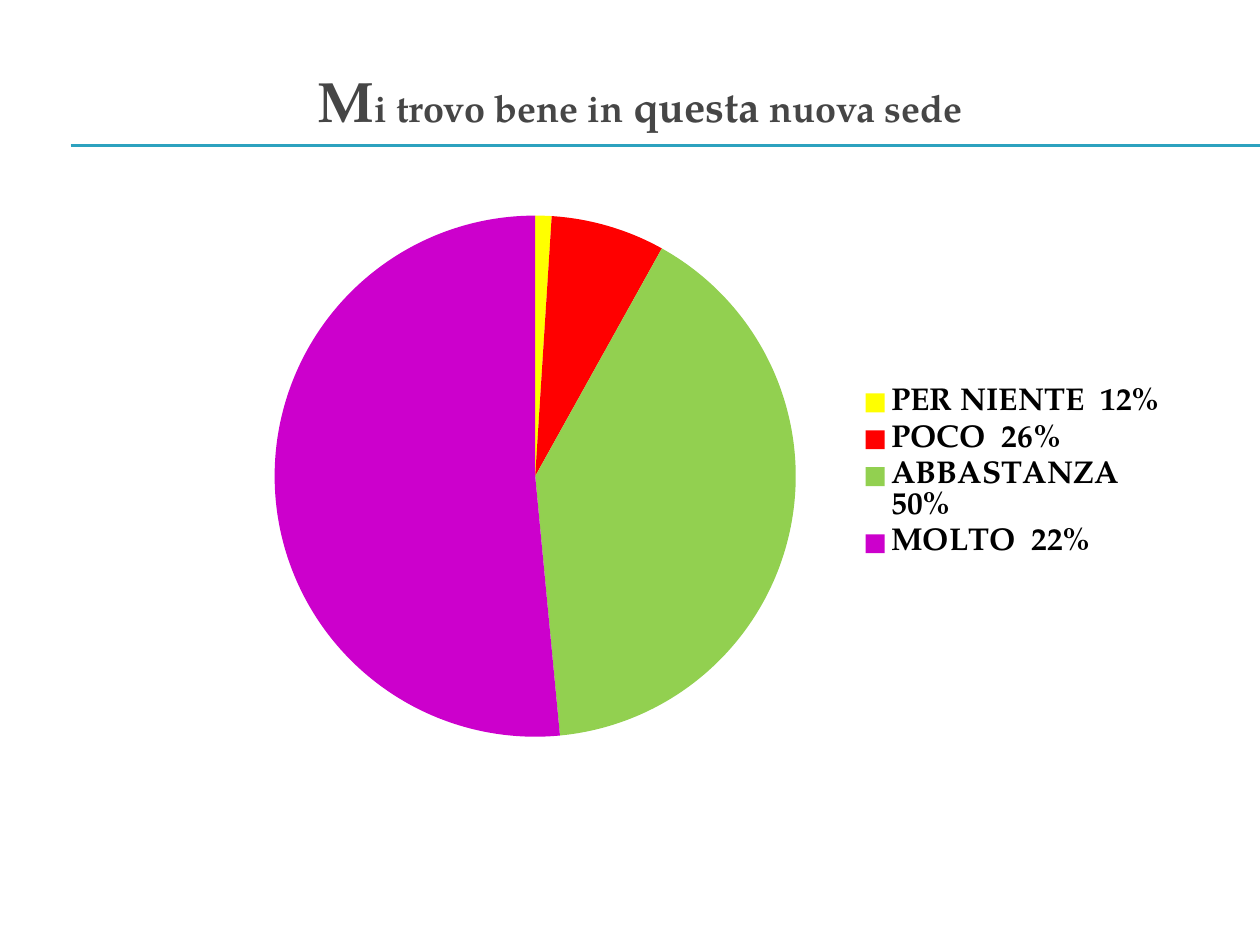
"""Build a survey slide with a ruled title and a pie chart."""
import dataclasses

import lxml.etree
import pptx
import pptx.chart.data
import pptx.dml.color
import pptx.enum.chart
import pptx.enum.shapes
import pptx.enum.text
import pptx.oxml
import pptx.oxml.ns
import pptx.util


@dataclasses.dataclass(frozen=True)
class Theme:
    """Colours, font and type sizes of the slide."""
    font: str = "TeX Gyre Pagella"
    title: str = "464646"
    rule: str = "2DA2BF"
    legend: str = "000000"
    initial_size: float = 32.4
    title_size: float = 21.6
    stress_size: float = 24.3
    legend_size: float = 18
    rule_width: float = 0.75


THEME = Theme()
WIDTH, HEIGHT = pptx.util.Inches(10), pptx.util.Inches(7.5)
ANSWERS = [
    ("PER NIENTE  12%", 1, "FFFF00"),
    ("POCO  26%", 7, "FF0000"),
    ("ABBASTANZA  50%", 40, "92D050"),
    ("MOLTO  22%", 51, "CC00CC"),
]


def rgb(value):
    """Turn a hex string into a colour."""
    return pptx.dml.color.RGBColor.from_string(value)


def share(left, top, width, height):
    """Turn percentages of the slide into a box in whole units."""
    sides = zip((left, top, width, height), (WIDTH, HEIGHT, WIDTH, HEIGHT))
    return [round(part * side / 100) for part, side in sides]


def add_rules(page, box):
    """Draw two thin lines along the top and bottom of the box."""
    left, top, width, height = box
    for y in (top, top + height):
        rule = page.shapes.add_connector(
            pptx.enum.shapes.MSO_CONNECTOR.STRAIGHT, left, y, left + width, y)
        rule.line.color.rgb = rgb(THEME.rule)
        rule.line.width = pptx.util.Pt(THEME.rule_width)
        lxml.etree.SubElement(
            rule._element.spPr, pptx.oxml.ns.qn("a:effectLst"))


def add_title(page, box):
    """Place the centred title with its larger initial and stressed word."""
    frame = page.shapes.add_textbox(*box).text_frame
    frame.word_wrap = True
    frame.vertical_anchor = pptx.enum.text.MSO_ANCHOR.MIDDLE
    para = frame.paragraphs[0]
    para.alignment = pptx.enum.text.PP_ALIGN.CENTER
    para.font.name = THEME.font
    para.font.bold = True
    para.font.color.rgb = rgb(THEME.title)
    for text, size in (("M", THEME.initial_size),
                       ("i trovo bene in ", THEME.title_size),
                       ("questa", THEME.stress_size),
                       (" nuova sede", THEME.title_size)):
        span = para.add_run()
        span.text = text
        span.font.size = pptx.util.Pt(size)


def set_layout(element, x, y, width, height, inner=False):
    """Fix a chart part at the given shares of the chart area."""
    for old in element.findall(pptx.oxml.ns.qn("c:layout")):
        element.remove(old)
    target = '<c:layoutTarget val="inner"/>' if inner else ""
    values = zip("xywh", (x, y, width, height))
    sizes = "".join(f'<c:{key} val="{value}"/>' for key, value in values)
    layout = pptx.oxml.parse_xml(
        f'<c:layout {pptx.oxml.ns.nsdecls("c")}><c:manualLayout>{target}'
        '<c:xMode val="edge"/><c:yMode val="edge"/>'
        f'{sizes}</c:manualLayout></c:layout>')
    position = element.find(pptx.oxml.ns.qn("c:legendPos"))
    if position is None:
        element.insert(0, layout)
    else:
        position.addnext(layout)


def add_pie(page, box):
    """Place the pie of answers with its legend on the right."""
    data = pptx.chart.data.CategoryChartData()
    data.categories = [name for name, _, _ in ANSWERS]
    data.add_series("Series 1", [value for _, value, _ in ANSWERS])
    chart = page.shapes.add_chart(
        pptx.enum.chart.XL_CHART_TYPE.PIE, *box, data).chart
    chart.has_title = False
    chart.font.name = THEME.font
    chart.font.size = pptx.util.Pt(THEME.legend_size)
    chart.font.color.rgb = rgb(THEME.legend)
    chart.has_legend = True
    legend = chart.legend
    legend.position = pptx.enum.chart.XL_LEGEND_POSITION.RIGHT
    legend.include_in_layout = True
    legend.font.name = THEME.font
    legend.font.size = pptx.util.Pt(THEME.legend_size)
    legend.font.color.rgb = rgb(THEME.legend)
    legend.font.bold = True
    plot = chart.plots[0]
    plot.vary_by_categories = True
    for index, (_, _, colour) in enumerate(ANSWERS):
        fill = plot.series[0].points[index].format.fill
        fill.solid()
        fill.fore_color.rgb = rgb(colour)
    area = chart._chartSpace.chart.plotArea
    set_layout(area, 0.06, 0.03, 0.54, 0.94, inner=True)
    set_layout(legend._element, 0.66, 0.33, 0.33, 0.33)


def main():
    """Build the deck and save it."""
    deck = pptx.Presentation()
    deck.slide_width, deck.slide_height = WIDTH, HEIGHT
    page = deck.slides.add_slide(deck.slide_layouts[6])
    add_rules(page, share(5.6, 15.33, 94.4, 0.13))
    add_title(page, share(3.3, 6.67, 95, 7.87))
    add_pie(page, share(17.2, 20.8, 76.6, 59.2))
    deck.save("out.pptx")


if __name__ == "__main__":
    main()
